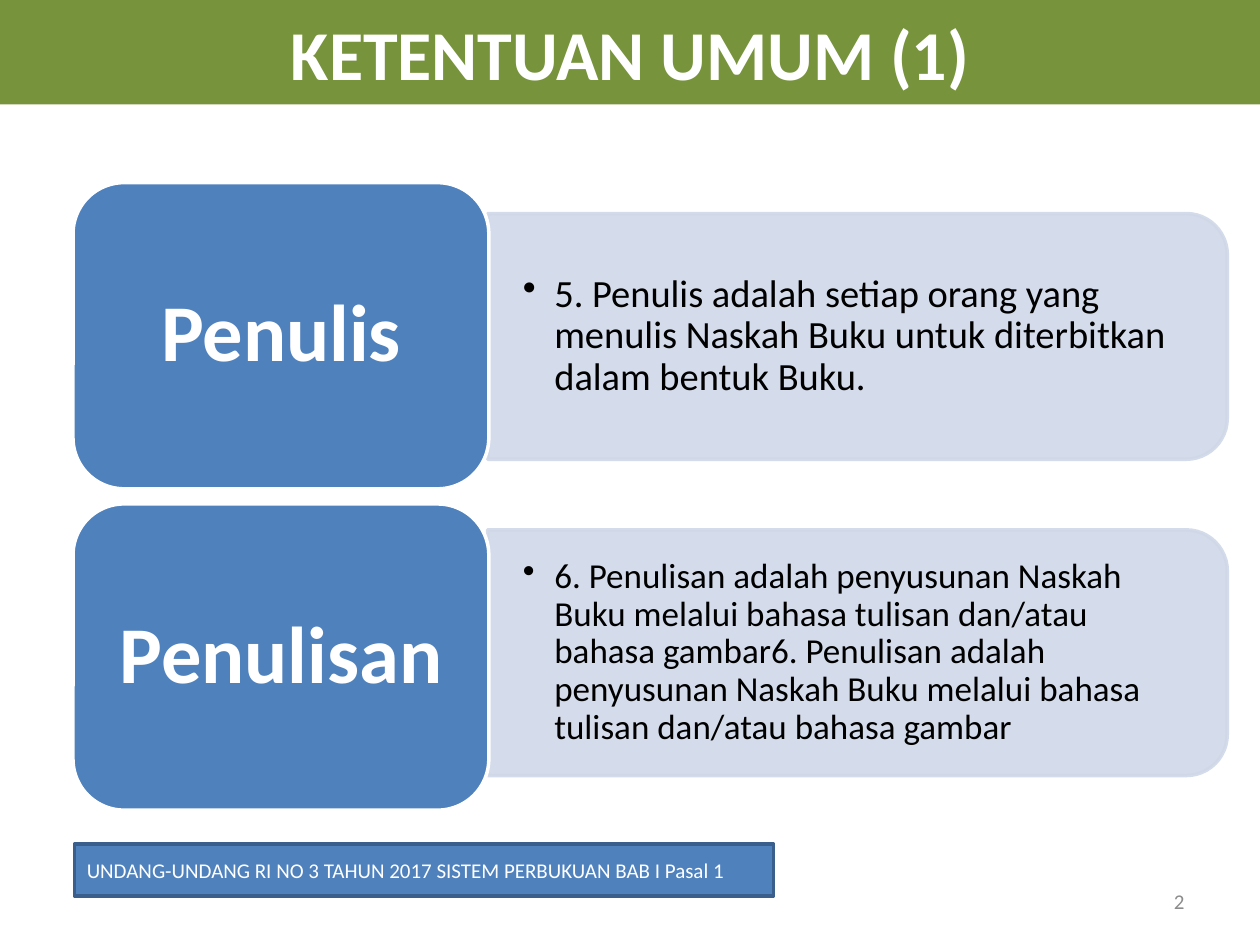
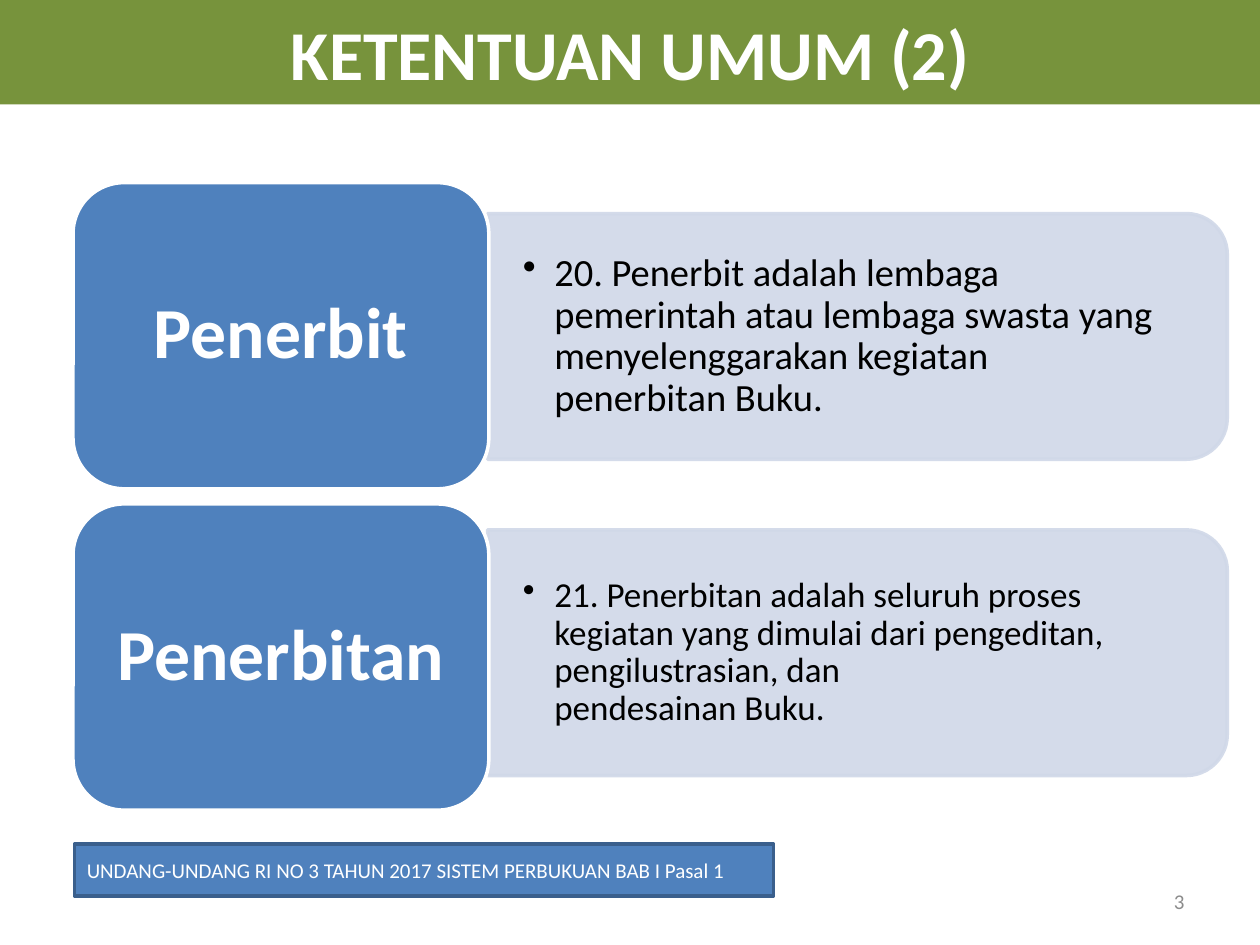
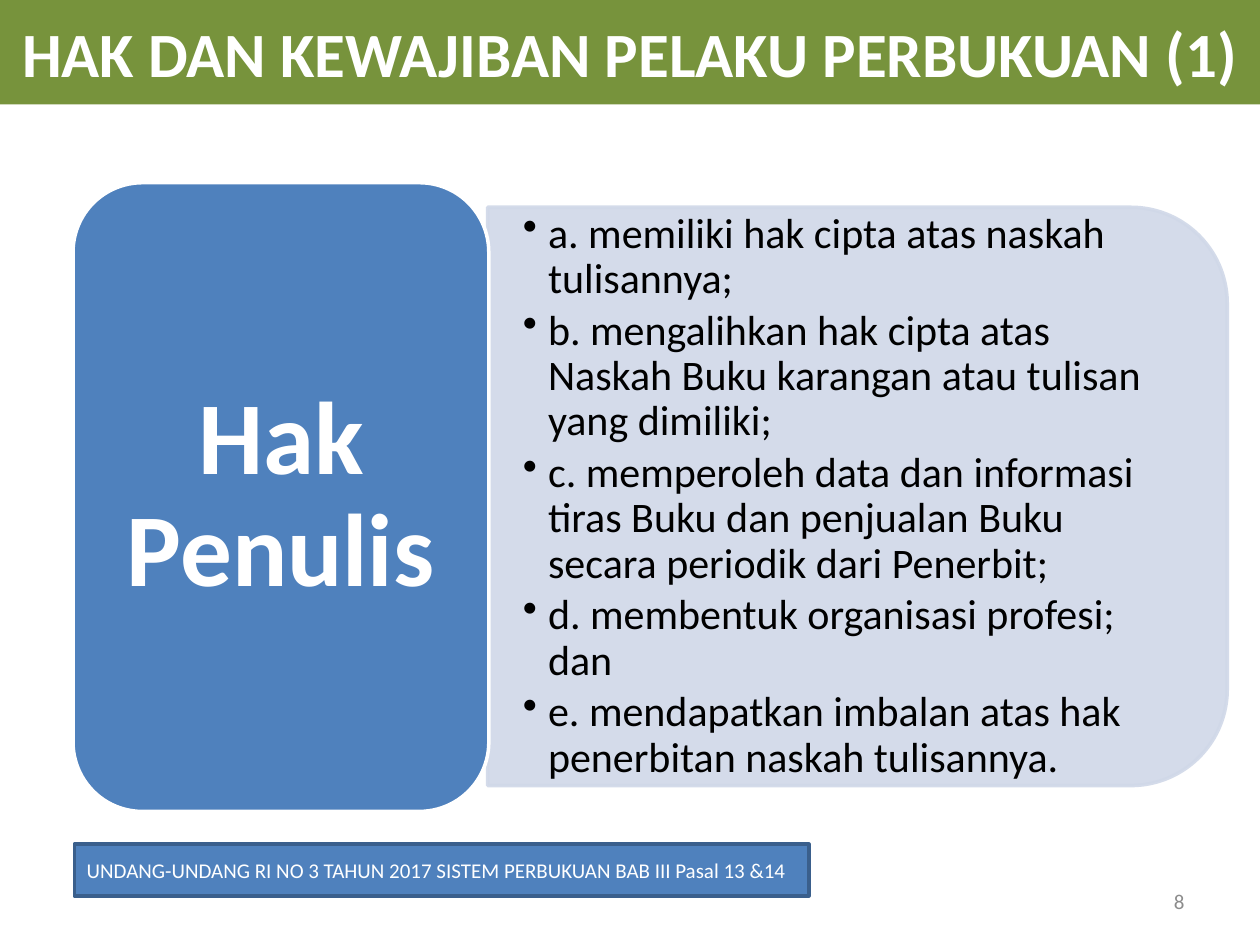
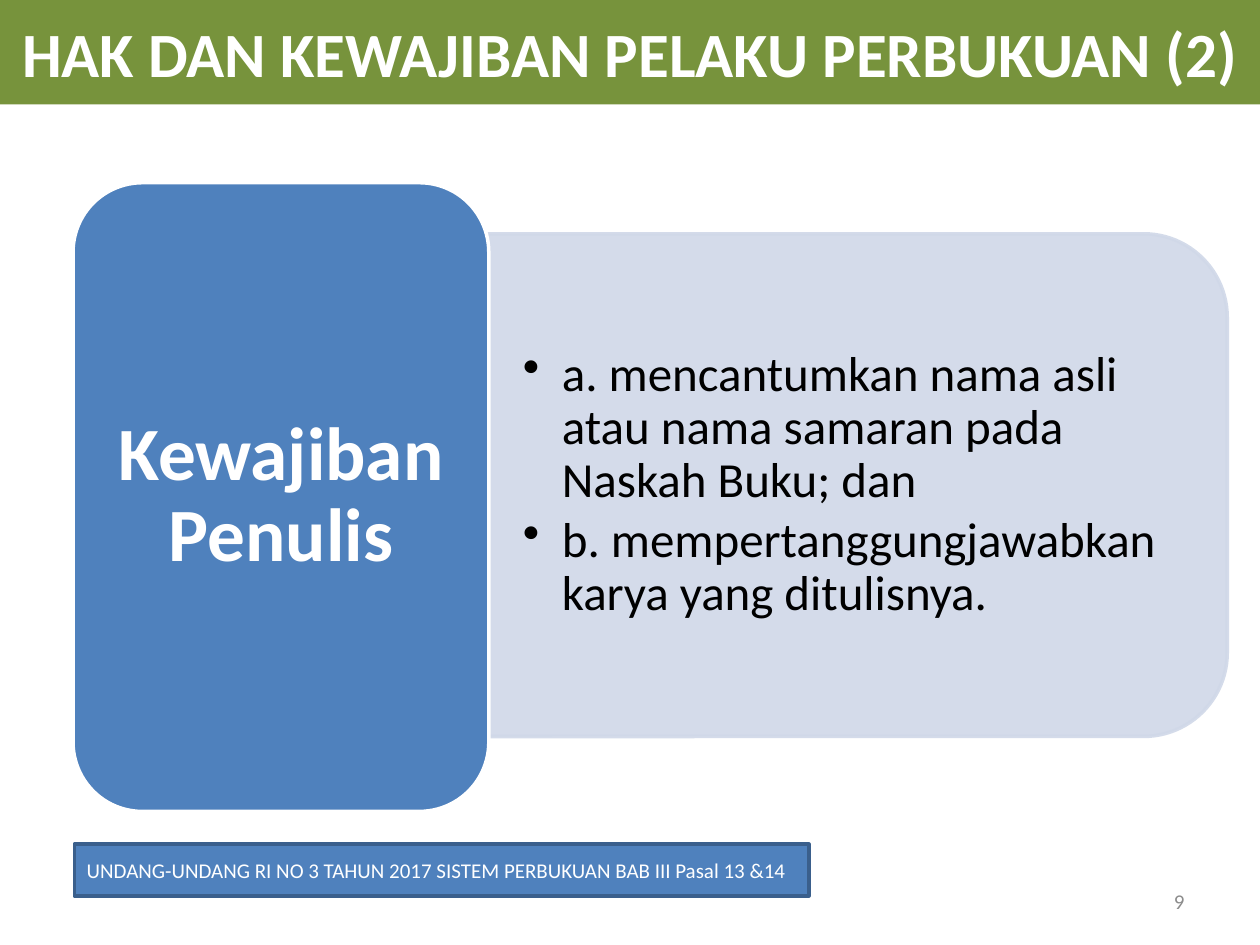
from lxml import etree
from pptx import Presentation
from pptx.dml.color import RGBColor
from pptx.enum import shapes, text
from pptx.oxml.ns import qn
from pptx.util import Inches, Pt

WHITE = RGBColor(0xFF, 0xFF, 0xFF)
BLACK = RGBColor(0x00, 0x00, 0x00)
GREY = RGBColor(0x8C, 0x8C, 0x8C)
GREEN = RGBColor(0x77, 0x93, 0x3C)
BLUE = RGBColor(0x4F, 0x81, 0xBD)
DARK_BLUE = RGBColor(0x3A, 0x5F, 0x8C)
PALE_BLUE = RGBColor(0xD0, 0xD8, 0xE8)

SHAPE = shapes.MSO_SHAPE
ALIGN = text.PP_ALIGN
FONT = "Calibri"
CORNER = 0.29 / 6  # share of the short side that a rounded corner takes from the text
BAR_LEFT, BAR_WIDTH = 3.87, 5.87
LABEL_LEFT, LABEL_WIDTH = 0.58, 3.3


class Deck:
    """Shared style and the slide being built."""

    def __init__(self):
        self.prs = Presentation()
        self.prs.slide_width, self.prs.slide_height = Inches(10), Inches(7.5)
        self.slide = None

    def new_slide(self, title, title_size, source, source_width, number):
        self.slide = self.prs.slides.add_slide(self.prs.slide_layouts[6])
        self.page_number(number)
        self.title_band(title, title_size)
        self.source_box(source, source_width)

    def shape(self, kind, box, fill, line=None):
        item = self.slide.shapes.add_shape(kind, *map(Inches, box))
        item.shadow.inherit = False
        item.fill.solid()
        item.fill.fore_color.rgb = fill
        if line is None:
            item.line.fill.background()
        else:
            item.line.color.rgb = line
            item.line.width = Pt(2)
        return item

    def textbox(self, box):
        return self.slide.shapes.add_textbox(*map(Inches, box))

    def put_text(self, item, lines, size, color, bold=False, inset=(0.1, 0.05),
                 **paragraph_format):
        frame = item.text_frame
        side, end = map(Inches, inset)
        frame_format = dict(word_wrap=True, vertical_anchor=text.MSO_ANCHOR.MIDDLE,
                            margin_left=side, margin_right=side,
                            margin_top=end, margin_bottom=end)
        for key, value in frame_format.items():
            setattr(frame, key, value)
        for i, line in enumerate(lines):
            paragraph = frame.add_paragraph() if i else frame.paragraphs[0]
            paragraph.text = line
            for key, value in paragraph_format.items():
                setattr(paragraph, key, value)
            for run in paragraph.runs:
                for key, value in dict(name=FONT, size=Pt(size), bold=bold).items():
                    setattr(run.font, key, value)
                run.font.color.rgb = color
        return frame

    # Parts on every slide
    def title_band(self, title, size):
        band = self.shape(SHAPE.RECTANGLE, (0, 0, 10, 0.83), GREEN)
        self.put_text(band, [title], size, WHITE, bold=True, alignment=ALIGN.CENTER)

    def source_box(self, source, width):
        box = self.shape(SHAPE.RECTANGLE, (0.59, 6.7, width, 0.41), BLUE, DARK_BLUE)
        self.put_text(box, [source], 12, WHITE, alignment=ALIGN.LEFT)

    def page_number(self, number):
        self.put_text(self.textbox((7.17, 6.95, 2.33, 0.4)), [str(number)], 12, GREY,
                      alignment=ALIGN.RIGHT)

    # One term with its explanation
    def bar(self, middle, height, points, size, indent):
        # The shape is turned a quarter, so its width and height swap
        box = (BAR_LEFT + (BAR_WIDTH - height) / 2, middle - BAR_WIDTH / 2, height, BAR_WIDTH)
        bar = self.shape(SHAPE.ROUND_2_SAME_RECTANGLE, box, PALE_BLUE, PALE_BLUE)
        bar.rotation = 90
        for color in bar._element.spPr.iter(qn("a:srgbClr")):
            etree.SubElement(color, qn("a:alpha"), val="90000")

        trim = CORNER * height
        body = self.textbox((BAR_LEFT + 0.01, middle - height / 2 + trim,
                             BAR_WIDTH - trim, height - 2 * trim))
        frame = self.put_text(body, points, size, BLACK, inset=(0.27, 0.14),
                              line_spacing=0.9, space_after=Pt(0.15 * size))
        for paragraph in frame.paragraphs:
            properties = paragraph._p.get_or_add_pPr()
            properties.set("marL", str(Inches(indent)))
            properties.set("indent", str(-Inches(indent)))
            etree.SubElement(properties, qn("a:buChar"), char="•")

    def label(self, top, height, term, size):
        self.shape(SHAPE.ROUNDED_RECTANGLE, (LABEL_LEFT, top, LABEL_WIDTH, height), BLUE, WHITE)
        trim = CORNER * min(LABEL_WIDTH, height)
        caption = self.textbox((LABEL_LEFT + trim, top + trim,
                                LABEL_WIDTH - 2 * trim, height - 2 * trim))
        self.put_text(caption, [term], size, WHITE, bold=True, inset=(size / 240, size / 480),
                      alignment=ALIGN.CENTER, line_spacing=0.9, space_after=Pt(0.35 * size))


LAW = "UNDANG-UNDANG RI NO 3 TAHUN 2017 SISTEM PERBUKUAN BAB "

# Slides with two terms: number, label size, (term, explanation) pairs
DEFINITIONS = [
    (2, 46, [
        ("Penulis", "5. Penulis adalah setiap orang yang menulis Naskah Buku untuk "
                    "diterbitkan dalam bentuk Buku."),
        ("Penulisan", "6. Penulisan adalah penyusunan Naskah Buku melalui bahasa tulisan "
                      "dan/atau bahasa gambar6. Penulisan adalah penyusunan Naskah Buku "
                      "melalui bahasa tulisan dan/atau bahasa gambar"),
    ]),
    (3, 41, [
        ("Penerbit", "20. Penerbit adalah lembaga pemerintah atau lembaga swasta yang "
                     "menyelenggarakan kegiatan\npenerbitan Buku."),
        ("Penerbitan", "21. Penerbitan adalah seluruh proses kegiatan yang dimulai dari "
                       "pengeditan, pengilustrasian, dan\npendesainan Buku."),
    ]),
]
# Rows of a two-term slide: bar middle, label top, text size
ROWS = [(2.67, 1.45, 22), (5.18, 4, 20)]

# Slides with one term: number, term, label size, bar middle, bar height, text size, indent, points
DUTIES = [
    (8, "Hak Penulis", 59, 3.94, 4.59, 24, 0.2, [
        "a. memiliki hak cipta atas naskah tulisannya;",
        "b. mengalihkan hak cipta atas Naskah Buku karangan atau tulisan yang dimiliki;",
        "c. memperoleh data dan informasi tiras Buku dan penjualan Buku secara periodik "
        "dari Penerbit;",
        "d. membentuk organisasi profesi; dan",
        "e. mendapatkan imbalan atas hak penerbitan naskah tulisannya.",
    ]),
    (9, "Kewajiban Penulis", 43, 3.85, 3.99, 28, 0.31, [
        "a. mencantumkan nama asli atau nama samaran pada Naskah Buku; dan",
        "b. mempertanggungjawabkan karya yang ditulisnya.",
    ]),
]


def main():
    deck = Deck()

    # General provisions
    for part, (number, label_size, terms) in enumerate(DEFINITIONS, 1):
        deck.new_slide(f"KETENTUAN UMUM ({part})", 40, LAW + "I Pasal 1", 5.55, number)
        for (middle, top, size), (term, meaning) in zip(ROWS, terms):
            deck.bar(middle, 1.95, [meaning], size, 0.25)
            deck.label(top, 2.43, term, label_size)

    # Rights and duties
    for part, (number, term, label_size, middle, height, size, indent, points) in enumerate(DUTIES, 1):
        deck.new_slide(f"HAK DAN KEWAJIBAN PELAKU PERBUKUAN ({part})", 36,
                       LAW + "III Pasal 13 &14", 5.83, number)
        deck.bar(middle, height, points, size, indent)
        deck.label(1.45, 4.99, term, label_size)

    deck.prs.save("out.pptx")


if __name__ == "__main__":
    main()
